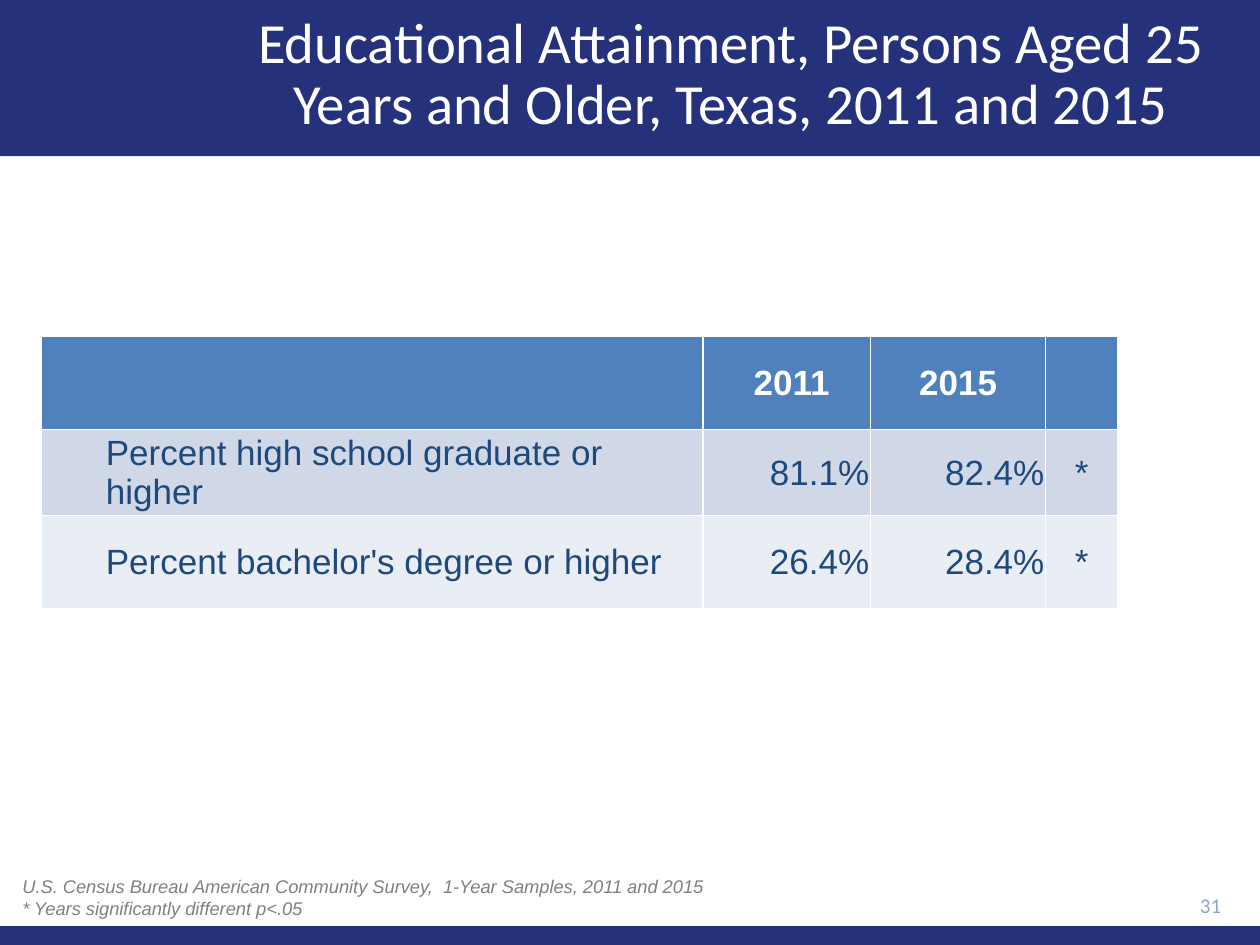
from pptx import Presentation
from pptx.dml.color import RGBColor
from pptx.enum.shapes import MSO_SHAPE as Shape
from pptx.enum.text import MSO_ANCHOR as Anchor, PP_ALIGN as Align
from pptx.util import Inches, Pt

NAVY = RGBColor(0x25, 0x32, 0x7B)
WHITE = RGBColor(0xFF, 0xFF, 0xFF)
HEADER_BLUE = RGBColor(0x4F, 0x81, 0xBD)
TEXT_BLUE = RGBColor(0x1F, 0x49, 0x7D)
BAND_DARK = RGBColor(0xD0, 0xD8, 0xE8)
BAND_LIGHT = RGBColor(0xE9, 0xED, 0xF4)
NUMBER_BLUE = RGBColor(0x8F, 0xA5, 0xD1)
GRAY = RGBColor(0x80, 0x80, 0x80)

TITLE = "Educational Attainment, Persons Aged 25 Years and Older, Texas, 2011 and 2015"
ATTAINMENT = [
    ("", " 2011", "2015", ""),
    ("Percent high school graduate or higher", "81.1%", "82.4%", "*"),
    ("Percent bachelor's degree or higher", "26.4%", "28.4%", "*"),
]
SOURCE_NOTE = [
    "U.S. Census Bureau American Community Survey,  1-Year Samples, 2011 and 2015",
    "* Years significantly different p<.05",
]
PAGE_NUMBER = "31"

WIDTH, HEIGHT = 10, 7.5
TOP_BAND, BOTTOM_BAND = 1.24, 0.15
COLUMN_WIDTHS = [5.25, 1.33, 1.39, 0.57]
ROW_HEIGHTS = [0.74, 0.68, 0.74]
ROW_FILLS = [HEADER_BLUE, BAND_DARK, BAND_LIGHT]
COLUMN_ALIGNS = [Align.LEFT, Align.RIGHT, Align.RIGHT, Align.CENTER]
LABEL_INDENT = 0.5


def write(frame, lines, size, color, font="Arial", bold=False, italic=False,
          align=Align.LEFT, spacing=None, indent=0):
    for index, line in enumerate(lines):
        paragraph = frame.add_paragraph() if index else frame.paragraphs[0]
        paragraph.alignment = align
        if spacing:
            paragraph.line_spacing = spacing
        if indent:
            properties = paragraph._p.get_or_add_pPr()
            properties.set("marL", str(Inches(indent)))
            properties.set("indent", "0")
        run = paragraph.add_run()
        run.text = line
        run.font.size = Pt(size)
        run.font.name = font
        run.font.color.rgb = color
        run.font.bold = bold
        run.font.italic = italic


def add_band(slide, top, height):
    band = slide.shapes.add_shape(
        Shape.RECTANGLE, 0, Inches(top), Inches(WIDTH), Inches(height))
    band.shadow.inherit = False
    band.fill.solid()
    band.fill.fore_color.rgb = NAVY
    band.line.fill.background()


def add_text(slide, place, lines, size, color, anchor=Anchor.MIDDLE, **style):
    frame = slide.shapes.add_textbox(*map(Inches, place)).text_frame
    frame.word_wrap = True
    frame.vertical_anchor = anchor
    write(frame, lines, size, color, **style)


def add_attainment_table(slide, left, top):
    table = slide.shapes.add_table(
        len(ROW_HEIGHTS), len(COLUMN_WIDTHS), Inches(left), Inches(top),
        Inches(sum(COLUMN_WIDTHS)), Inches(sum(ROW_HEIGHTS))).table
    for column, width in zip(table.columns, COLUMN_WIDTHS):
        column.width = Inches(width)
    for r, values in enumerate(ATTAINMENT):
        table.rows[r].height = Inches(ROW_HEIGHTS[r])
        header = r == 0
        for c, value in enumerate(values):
            cell = table.cell(r, c)
            cell.fill.solid()
            cell.fill.fore_color.rgb = ROW_FILLS[r]
            if not value:
                continue
            cell.vertical_anchor = Anchor.MIDDLE
            cell.margin_left = cell.margin_right = cell.margin_top = Inches(0.01)
            cell.margin_bottom = 0
            write(cell.text_frame, [value], 20, WHITE if header else TEXT_BLUE,
                  bold=header,
                  align=Align.CENTER if header else COLUMN_ALIGNS[c],
                  indent=0 if c else LABEL_INDENT)


def main():
    deck = Presentation()
    deck.slide_width, deck.slide_height = Inches(WIDTH), Inches(HEIGHT)
    slide = deck.slides.add_slide(deck.slide_layouts[6])
    add_band(slide, 0, TOP_BAND)
    add_band(slide, HEIGHT - BOTTOM_BAND, BOTTOM_BAND)
    add_text(slide, (1.7, 0.1, 8.2, 1), [TITLE], 32.4, WHITE,
             font="Calibri", align=Align.CENTER, spacing=0.9)
    add_attainment_table(slide, 0.33, 2.67)
    add_text(slide, (8.9, 7.01, 0.89, 0.34), [PAGE_NUMBER], 12, NUMBER_BLUE,
             font="Calibri", align=Align.RIGHT)
    add_text(slide, (0.08, 6.9, 7.46, 0.45), SOURCE_NOTE, 10.5, GRAY,
             anchor=Anchor.TOP, italic=True)
    deck.save("out.pptx")


if __name__ == "__main__":
    main()
